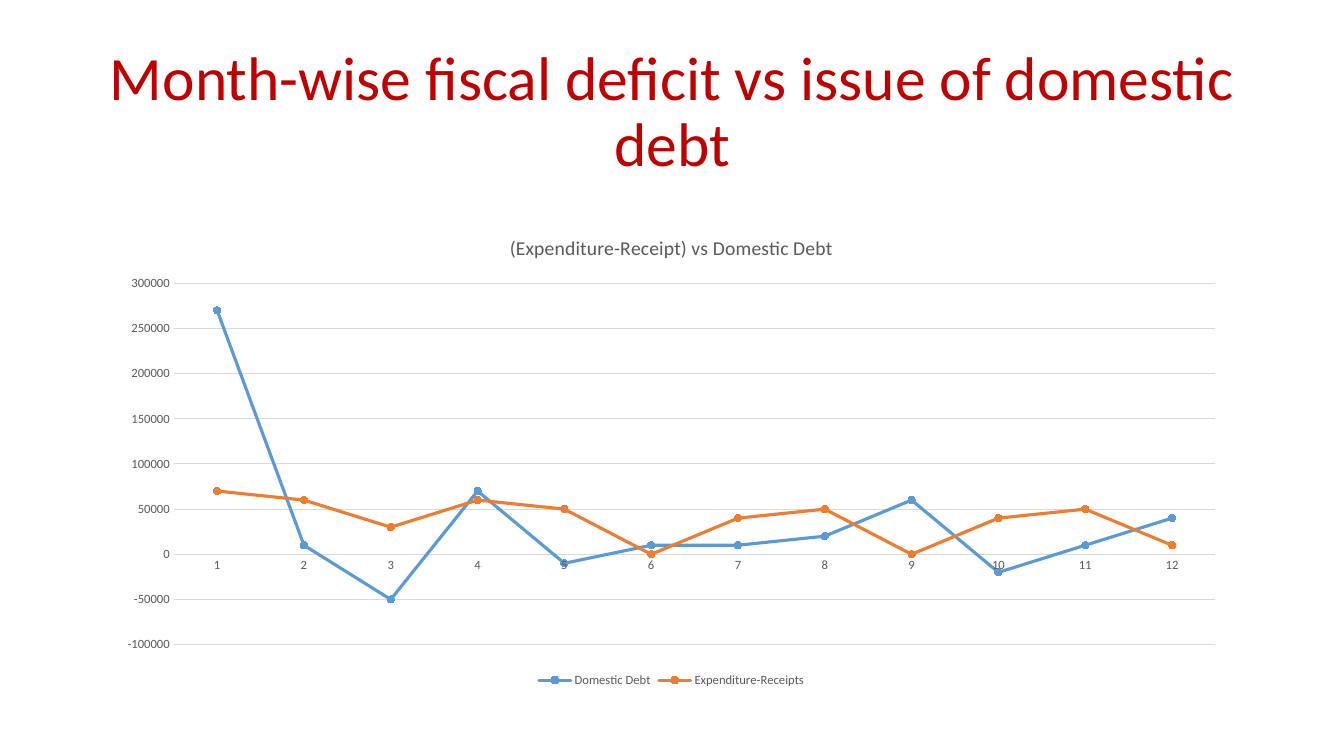
from pptx import Presentation
from pptx.chart.data import CategoryChartData
from pptx.dml.color import RGBColor
from pptx.enum.chart import XL_CHART_TYPE, XL_LEGEND_POSITION, XL_MARKER_STYLE, XL_TICK_MARK
from pptx.enum.text import MSO_ANCHOR, PP_ALIGN
from pptx.util import Inches, Pt

COLORS = {"title": "C00000", "text": "595959", "grid": "D9D9D9"}
FONT = "Calibri"
SERIES = {
    "Domestic Debt": ("5B9BD5", [270000, 10000, -50000, 70000, -10000, 10000,
                                 10000, 20000, 60000, -20000, 10000, 40000]),
    "Expenditure-Receipts": ("ED7D31", [70000, 60000, 30000, 60000, 50000, 0,
                                        40000, 50000, 0, 40000, 50000, 10000]),
}


def format_font(font, size, color):
    values = {"name": FONT, "size": Pt(size), "bold": False}
    for name, value in values.items():
        setattr(font, name, value)
    font.color.rgb = RGBColor.from_string(color)


def format_line(line, color, width):
    line.color.rgb = RGBColor.from_string(color)
    line.width = Pt(width)


presentation = Presentation()
presentation.slide_width = Inches(13.33)
presentation.slide_height = Inches(7.5)
slide = presentation.slides.add_slide(presentation.slide_layouts[5])

# Title
title = slide.shapes.title
title_box = {"left": 0.92, "top": 0.4, "width": 11.5, "height": 1.45}
for name, value in title_box.items():
    setattr(title, name, Inches(value))
title.text_frame.text = "Month-wise fiscal deficit vs issue of domestic debt"
title.text_frame.vertical_anchor = MSO_ANCHOR.MIDDLE
title.text_frame.word_wrap = True
paragraph = title.text_frame.paragraphs[0]
paragraph.alignment = PP_ALIGN.CENTER
paragraph.line_spacing = 0.9
format_font(paragraph.runs[0].font, 44, COLORS["title"])

# Line chart by month
chart_data = CategoryChartData()
chart_data.categories = [str(month) for month in range(1, 13)]
for name, (color, values) in SERIES.items():
    chart_data.add_series(name, values)
chart = slide.shapes.add_chart(
    XL_CHART_TYPE.LINE_MARKERS, Inches(1.04), Inches(2.14),
    Inches(11.24), Inches(4.72), chart_data).chart
format_font(chart.font, 10, COLORS["text"])

chart.has_title = True
chart.chart_title.include_in_layout = False
chart.chart_title.text_frame.text = "(Expenditure-Receipt) vs Domestic Debt"
chart_title_run = chart.chart_title.text_frame.paragraphs[0].runs[0]
format_font(chart_title_run.font, 14, COLORS["text"])

chart.has_legend = True
chart.legend.position = XL_LEGEND_POSITION.BOTTOM
chart.legend.include_in_layout = False
format_font(chart.legend.font, 9, COLORS["text"])

for axis in (chart.category_axis, chart.value_axis):
    axis.major_tick_mark = XL_TICK_MARK.NONE
    axis.minor_tick_mark = XL_TICK_MARK.NONE
    format_font(axis.tick_labels.font, 9, COLORS["text"])
format_line(chart.category_axis.format.line, COLORS["grid"], 0.75)

value_axis = chart.value_axis
scale = {"minimum_scale": -100000, "maximum_scale": 300000, "major_unit": 50000}
for name, value in scale.items():
    setattr(value_axis, name, value)
value_axis.format.line.fill.background()
value_axis.has_major_gridlines = True
format_line(value_axis.major_gridlines.format.line, COLORS["grid"], 0.75)

for series, (color, values) in zip(chart.plots[0].series, SERIES.values()):
    series.smooth = False
    format_line(series.format.line, color, 2.25)
    marker = series.marker
    marker.style = XL_MARKER_STYLE.CIRCLE
    marker.size = 5
    marker.format.fill.solid()
    marker.format.fill.fore_color.rgb = RGBColor.from_string(color)
    format_line(marker.format.line, color, 0.75)

# Round line ends
for line in chart.element.xpath(".//c:ser/c:spPr/a:ln"):
    line.set("cap", "rnd")

presentation.save("out.pptx")
